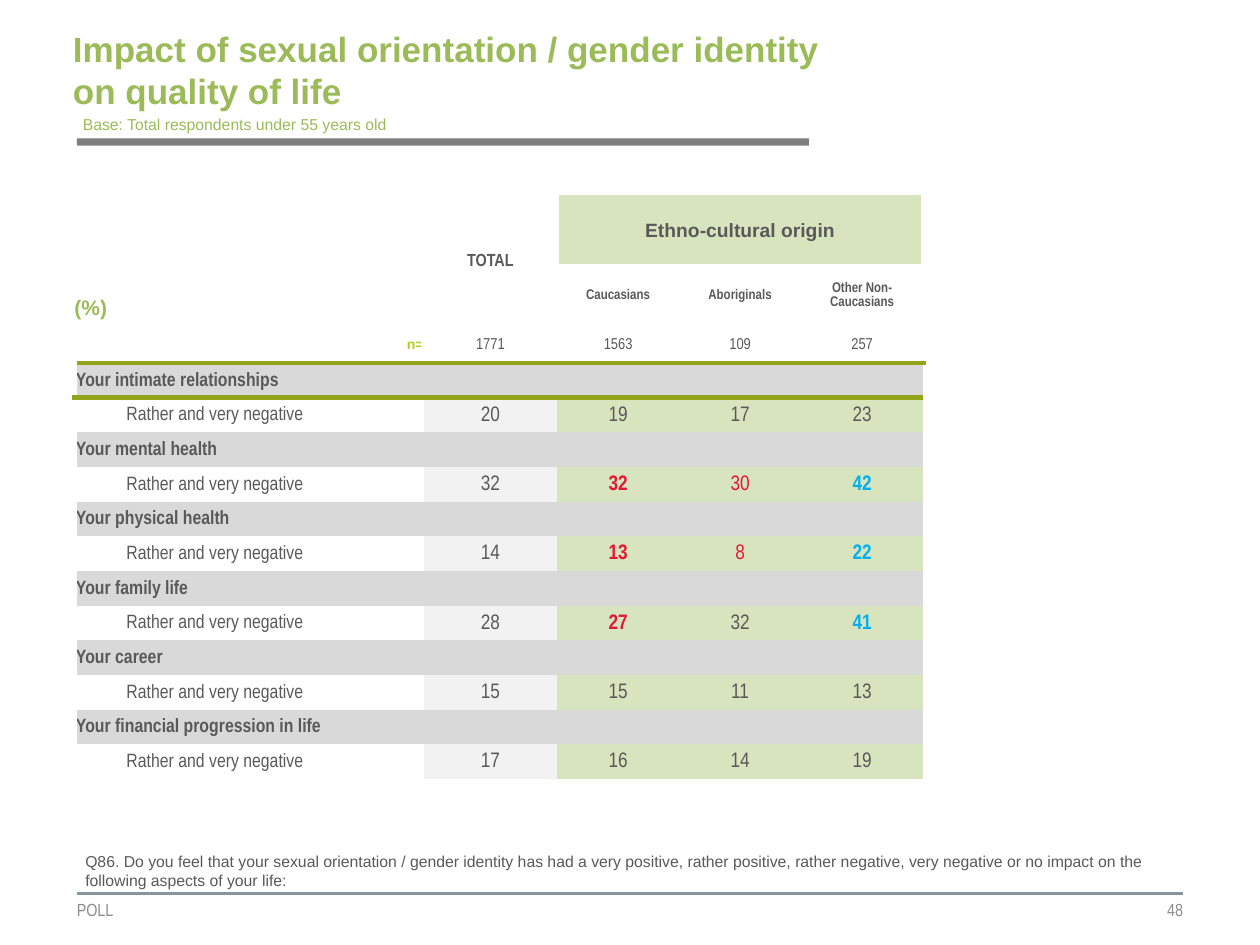
from lxml.etree import SubElement
from pptx import Presentation
from pptx.dml.color import RGBColor
from pptx.enum.shapes import MSO_CONNECTOR, MSO_SHAPE
from pptx.enum.text import MSO_ANCHOR as Anchor, PP_ALIGN as Align
from pptx.oxml.ns import qn
from pptx.util import Cm, Pt

GREEN = RGBColor(0x9B, 0xBB, 0x59)
LIME = RGBColor(0xB5, 0xCC, 0x22)
OLIVE = RGBColor(0x91, 0xA5, 0x1B)
PALE_GREEN = RGBColor(0xD7, 0xE4, 0xBD)
DARK = RGBColor(0x59, 0x59, 0x59)
BAR_GREY = RGBColor(0x7F, 0x7F, 0x7F)
FOOTER_GREY = RGBColor(0x8C, 0x8C, 0x8C)
RULE_GREY = RGBColor(0x88, 0x95, 0x9E)
BAND_GREY = RGBColor(0xD9, 0xD9, 0xD9)
LIGHT_GREY = RGBColor(0xF2, 0xF2, 0xF2)
WHITE = RGBColor(0xFF, 0xFF, 0xFF)
RED = RGBColor(0xE3, 0x18, 0x36)
BLUE = RGBColor(0x00, 0xB0, 0xF0)

SANS, NARROW = "Arial", "Arial Narrow"
NO_STYLE = "{2D5ABB26-0587-4C30-8999-92F81FD0307C}"
COLUMN_WIDTHS = (7.04, 2.69, 2.46, 2.46, 2.46)
HEADER_HEIGHTS = (0.88, 0.44, 1.26, 0.74)
BODY_HEIGHT = 0.7
GROUPS = ("Caucasians", "Aboriginals", "Other Non-Caucasians")
SAMPLE_SIZES = (1771, 1563, 109, 257)
ANSWER = "Rather and very negative"
ASPECTS = (
    ("Your intimate relationships", (20, 19, 17, 23), {}),
    ("Your mental health", (32, 32, 30, 42),
     {2: (RED, True), 3: (RED, False), 4: (BLUE, True)}),
    ("Your physical health", (14, 13, 8, 22),
     {2: (RED, True), 3: (RED, False), 4: (BLUE, True)}),
    ("Your family life", (28, 27, 32, 41), {2: (RED, True), 4: (BLUE, True)}),
    ("Your career", (15, 15, 11, 13), {}),
    ("Your financial progression in life", (17, 16, 14, 19), {}),
)


def format_para(para, size, color, name=SANS, bold=False, align=Align.LEFT):
    """Align a paragraph and format its runs."""
    para.alignment = align
    for span in para.runs:
        span.font.size = Pt(size)
        span.font.name = name
        span.font.bold = bold
        span.font.color.rgb = color


def set_margins(target, left, top, right, bottom):
    """Set the inner margins of a cell or text frame in centimetres."""
    target.margin_left, target.margin_top = Cm(left), Cm(top)
    target.margin_right, target.margin_bottom = Cm(right), Cm(bottom)


def add_text(page, text, left, top, width, height, size, color, name=SANS,
             align=Align.LEFT, wrap=True, inset=True):
    """Add a text box, centred vertically when it has no inset."""
    box = page.shapes.add_textbox(Cm(left), Cm(top), Cm(width), Cm(height))
    frame = box.text_frame
    frame.text = text
    frame.word_wrap = wrap
    if not inset:
        set_margins(frame, 0, 0, 0, 0)
        frame.vertical_anchor = Anchor.MIDDLE
    format_para(frame.paragraphs[0], size, color, name, align=align)


def add_title(page, text):
    """Place and format the title placeholder."""
    title = page.shapes.title
    title.left, title.top, title.width, title.height = Cm(1.47), Cm(0.53), Cm(15.14), Cm(1.75)
    frame = title.text_frame
    frame.text = text
    frame.word_wrap = True
    frame.vertical_anchor = Anchor.MIDDLE
    set_margins(frame, 0, 0, 0, 0)
    format_para(frame.paragraphs[0], 20, GREEN, bold=True)


def add_bar(page):
    """Add the grey bar under the title."""
    bar = page.shapes.add_shape(MSO_SHAPE.RECTANGLE, Cm(1.55), Cm(2.79), Cm(14.76), Cm(0.15))
    bar.shadow.inherit = False
    bar.fill.solid()
    bar.fill.fore_color.rgb = BAR_GREY
    bar.line.fill.background()


def add_footer_rule(page):
    """Add the thin line above the footer."""
    rule = page.shapes.add_connector(MSO_CONNECTOR.STRAIGHT, Cm(1.55), Cm(18.01), Cm(23.85), Cm(18.01))
    rule.line.color.rgb = RULE_GREY
    rule.line.width = Pt(1.5)
    SubElement(rule._element.spPr, qn("a:effectLst"))


def set_borders(cell, **colors):
    """Draw 3 pt cell borders, keyed L, R, T and B."""
    props = cell._tc.get_or_add_tcPr()
    for side in "LRTB":
        if side in colors:
            line = SubElement(props, qn(f"a:ln{side}"), w=str(Pt(3)))
            fill = SubElement(line, qn("a:solidFill"))
            SubElement(fill, qn("a:srgbClr"), val=str(colors[side]))


def set_fill(cell, color=None):
    """Fill a cell, or leave it clear."""
    if color is None:
        cell.fill.background()
    else:
        cell.fill.solid()
        cell.fill.fore_color.rgb = color


def write_cell(cell, text, size, color=DARK, name=NARROW, bold=False, align=Align.CENTER):
    """Write formatted text into a cell."""
    cell.text = str(text)
    format_para(cell.text_frame.paragraphs[0], size, color, name, bold, align)


def prepare_cell(cell, row, column):
    """Give a cell its margins, borders and fill by its place in the grid."""
    set_margins(cell, 0.03, 0.03, 0.03, 0)
    cell.vertical_anchor = Anchor.MIDDLE
    header = len(HEADER_HEIGHTS)
    borders, color = {}, None
    if row < header:
        borders["R"] = WHITE
        if column:
            borders["L"] = WHITE
        if row == header - 1:
            borders["B"] = OLIVE
        if row < 2 and column > 1:
            color = PALE_GREEN
    else:
        if column == 0:
            borders["L"] = WHITE
        if row == header:
            borders["T"] = OLIVE
        if (row - header) % 2 == 0:
            color = BAND_GREY
        elif column:
            color = LIGHT_GREY if column == 1 else PALE_GREEN
    set_borders(cell, **borders)
    set_fill(cell, color)


def write_header(table):
    """Merge and fill the header rows."""
    table.cell(0, 1).merge(table.cell(2, 1))
    table.cell(0, 2).merge(table.cell(1, 4))
    table.cell(1, 0).merge(table.cell(2, 0))
    write_cell(table.cell(0, 1), "TOTAL", 10, bold=True)
    write_cell(table.cell(0, 2), "Ethno-cultural origin", 11, name=SANS, bold=True)
    unit, count = table.cell(1, 0), table.cell(3, 0)
    write_cell(unit, "(%)", 12, GREEN, SANS, True, Align.LEFT)
    write_cell(count, "n=", 8, LIME, SANS, True, Align.RIGHT)
    unit.vertical_anchor = Anchor.BOTTOM
    for cell in (unit, count):
        set_margins(cell, 0, 0.13, 0, 0.13)
        cell.text_frame.paragraphs[0].line_spacing = 0.95
    for column, group in enumerate(GROUPS, 2):
        write_cell(table.cell(2, column), group, 8, bold=True)
    for column, size in enumerate(SAMPLE_SIZES, 1):
        write_cell(table.cell(3, column), size, 9)


def write_body(table):
    """Fill a heading row and an answer row for each aspect of life."""
    for index, (aspect, values, marks) in enumerate(ASPECTS):
        row = len(HEADER_HEIGHTS) + 2 * index
        write_cell(table.cell(row, 0), aspect, 11, bold=True, align=Align.LEFT)
        answer = table.cell(row + 1, 0)
        write_cell(answer, ANSWER, 11, align=Align.LEFT)
        answer.margin_left = Cm(1.05)
        for column, value in enumerate(values, 1):
            color, bold = marks.get(column, (DARK, False))
            write_cell(table.cell(row + 1, column), value, 12, color, bold=bold)


def add_results(page):
    """Add the results table."""
    heights = HEADER_HEIGHTS + (BODY_HEIGHT,) * (2 * len(ASPECTS))
    frame = page.shapes.add_table(len(heights), len(COLUMN_WIDTHS), Cm(1.5), Cm(3.94),
                                  Cm(sum(COLUMN_WIDTHS)), Cm(sum(heights)))
    table = frame.table
    table.first_row = table.horz_banding = False
    table._tbl.tblPr.find(qn("a:tableStyleId")).text = NO_STYLE
    for column, width in zip(table.columns, COLUMN_WIDTHS):
        column.width = Cm(width)
    for row, height in enumerate(heights):
        table.rows[row].height = Cm(height)
        for column in range(len(COLUMN_WIDTHS)):
            prepare_cell(table.cell(row, column), row, column)
    write_header(table)
    write_body(table)
    for cell in table.iter_cells():
        if not cell.text:
            SubElement(cell.text_frame.paragraphs[0]._p, qn("a:endParaRPr"), sz="800")


def main():
    """Build the slide and save the deck."""
    deck = Presentation()
    deck.slide_width, deck.slide_height = Cm(25.4), Cm(19.05)
    page = deck.slides.add_slide(deck.slide_layouts[5])
    add_footer_rule(page)
    add_bar(page)
    add_text(page, "POLL", 1.55, 18.01, 7.11, 0.66, 10, FOOTER_GREY, NARROW, inset=False)
    add_text(page, "48", 16.64, 18.01, 7.21, 0.66, 10, FOOTER_GREY, NARROW, Align.RIGHT, inset=False)
    add_results(page)
    add_text(page, "Base: Total respondents under 55 years old", 1.42, 2.18, 6.73, 0.64, 9, GREEN, wrap=False)
    add_text(page, "Q86. Do you feel that your sexual orientation / gender identity has had a very positive, "
             "rather positive, rather negative, very negative or no impact on the following aspects of your life:",
             1.47, 17.05, 22.38, 1.06, 9, DARK)
    add_title(page, "Impact of sexual orientation / gender identity on quality of life")
    deck.save("out.pptx")


if __name__ == "__main__":
    main()
